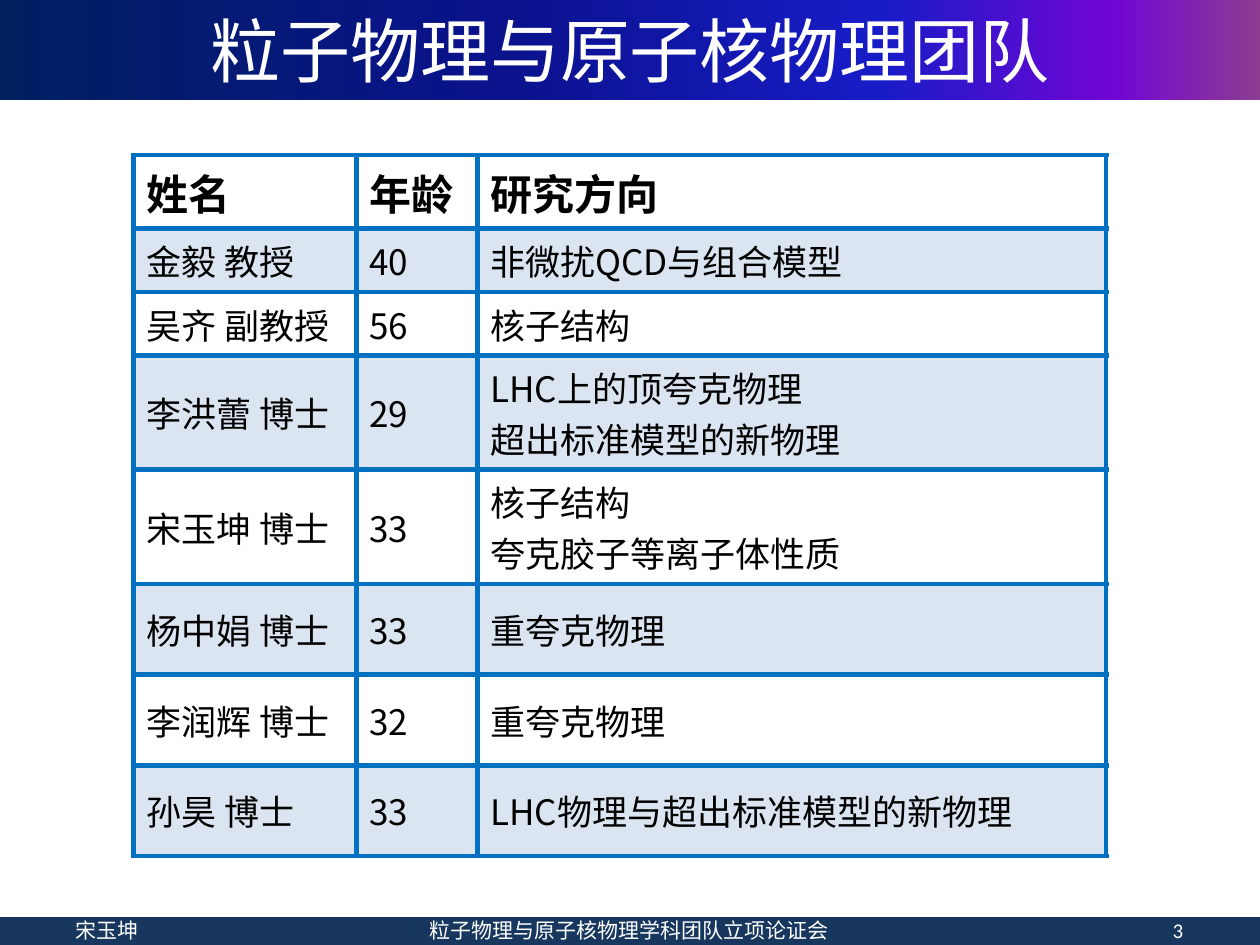
from lxml import etree
from pptx import Presentation
from pptx.dml import color
from pptx.enum import shapes, text
from pptx.oxml import ns
from pptx.util import Pt

WHITE = color.RGBColor(0xFF, 0xFF, 0xFF)
BLACK = color.RGBColor(0x00, 0x00, 0x00)
NAVY = color.RGBColor(0x17, 0x37, 0x5E)
BORDER_BLUE = color.RGBColor(0x00, 0x70, 0xC0)
BAND_BLUE = color.RGBColor(0x4F, 0x81, 0xBD)
HEADER_STOPS = [
    (0, color.RGBColor(0x00, 0x20, 0x60)),
    (40, color.RGBColor(0x0A, 0x12, 0x8C)),
    (70, color.RGBColor(0x18, 0x1C, 0xC7)),
    (88, color.RGBColor(0x70, 0x05, 0xD4)),
    (100, color.RGBColor(0x8C, 0x3D, 0x91)),
]
CJK_FONT = "Noto Sans CJK SC"
LATIN_FONT = "Calibri"

COLUMN_WIDTHS = [127.44, 69.12, 359.28]
ROW_HEIGHTS = [33.84] + [29.52] * 2 + [51.84] * 5
TEAM = [
    ("姓名", "年龄", "研究方向"),
    ("金毅 教授", "40", "非微扰QCD与组合模型"),
    ("吴齐 副教授", "56", "核子结构"),
    ("李洪蕾 博士", "29", "LHC上的顶夸克物理\n超出标准模型的新物理"),
    ("宋玉坤 博士", "33", "核子结构\n夸克胶子等离子体性质"),
    ("杨中娟 博士", "33", "重夸克物理"),
    ("李润辉 博士", "32", "重夸克物理"),
    ("孙昊 博士", "33", "LHC物理与超出标准模型的新物理"),
]


def add_xml(parent, tag, **attributes):
    return etree.SubElement(parent, ns.qn(tag), attributes)


def write_text(frame, words, *, size, ink, font=CJK_FONT, bold=False,
               align=text.PP_ALIGN.LEFT):
    """Fill a text frame, one paragraph for each line of words."""
    frame.word_wrap = True
    for index, line in enumerate(words.split("\n")):
        para = frame.add_paragraph() if index else frame.paragraphs[0]
        para.alignment = align
        span = para.add_run()
        span.text = line
        span.font.size = Pt(size)
        span.font.bold = bold
        span.font.color.rgb = ink
        span.font.name = font
        if font == CJK_FONT:
            add_xml(span.font._element, "a:ea", typeface=font)


class SlideBuilder:
    def __init__(self, deck):
        self.page = deck.slides.add_slide(deck.slide_layouts[5])

    def bar(self, top, height, fill=None, stops=None):
        """Add a full-width bar with a plain fill or gradient stops."""
        box = self.page.shapes.add_shape(
            shapes.MSO_SHAPE.RECTANGLE, Pt(-1.44), Pt(top), Pt(722.88), Pt(height))
        box.shadow.inherit = False
        box.line.fill.background()
        if not stops:
            box.fill.solid()
            box.fill.fore_color.rgb = fill
            return
        box.fill.gradient()
        box.fill.gradient_angle = 0
        stop_list = box._element.spPr.find(".//" + ns.qn("a:gsLst"))
        stop_list.clear()
        for position, shade in stops:
            stop = add_xml(stop_list, "a:gs", pos=str(position * 1000))
            add_xml(stop, "a:srgbClr", val=str(shade))

    def title(self, words):
        box = self.page.shapes.title
        box.left, box.top, box.width, box.height = Pt(36), Pt(0), Pt(648), Pt(56.88)
        frame = box.text_frame
        frame.auto_size = text.MSO_AUTO_SIZE.NONE
        frame.vertical_anchor = text.MSO_ANCHOR.MIDDLE
        write_text(frame, words, size=40, ink=WHITE, align=text.PP_ALIGN.CENTER)
        self.page.shapes._spTree.append(box._element)  # in front of the bar

    def footer(self, words, left, width, align):
        box = self.page.shapes.add_textbox(Pt(left), Pt(516.96), Pt(width), Pt(28.8))
        box.text_frame.vertical_anchor = text.MSO_ANCHOR.MIDDLE
        write_text(box.text_frame, words, size=12, ink=WHITE, font=LATIN_FONT,
                   align=align)

    def table(self, rows, left, top):
        frame = self.page.shapes.add_table(
            len(rows), len(COLUMN_WIDTHS), Pt(left), Pt(top),
            Pt(sum(COLUMN_WIDTHS)), Pt(sum(ROW_HEIGHTS)))
        grid = frame.table
        grid.first_row = grid.horz_banding = False
        for column, width in zip(grid.columns, COLUMN_WIDTHS):
            column.width = Pt(width)
        for row, height in zip(grid.rows, ROW_HEIGHTS):
            row.height = Pt(height)
        for row_index, row in enumerate(rows):
            for column_index, words in enumerate(row):
                self.cell(grid.cell(row_index, column_index), words,
                          header=row_index == 0, banded=row_index % 2 == 1)

    def cell(self, cell, words, header, banded):
        cell.vertical_anchor = text.MSO_ANCHOR.MIDDLE
        properties = cell._tc.get_or_add_tcPr()
        for side in "LRTB":
            line = add_xml(properties, "a:ln" + side, w=str(Pt(3)))
            fill = add_xml(line, "a:solidFill")
            add_xml(fill, "a:srgbClr", val=str(BORDER_BLUE))
        if banded:
            cell.fill.solid()
            cell.fill.fore_color.rgb = BAND_BLUE
            shade = properties.find(ns.qn("a:solidFill") + "/" + ns.qn("a:srgbClr"))
            add_xml(shade, "a:alpha", val="20000")
        else:
            cell.fill.background()
        write_text(cell.text_frame, words, size=24 if header else 20, ink=BLACK,
                   bold=header)


def main():
    deck = Presentation()
    deck.slide_width, deck.slide_height = Pt(720), Pt(540)
    builder = SlideBuilder(deck)
    builder.bar(524.16, 17.28, fill=NAVY)
    builder.bar(0, 56.88, stops=HEADER_STOPS)
    builder.footer("宋玉坤", 36, 84.96, text.PP_ALIGN.LEFT)
    builder.footer("粒子物理与原子核物理学科团队立项论证会", 161.28, 396.72,
                   text.PP_ALIGN.CENTER)
    builder.footer("3", 598.32, 84.96, text.PP_ALIGN.RIGHT)
    builder.title("粒子物理与原子核物理团队")
    builder.table(TEAM, 76.32, 88.56)
    deck.save("out.pptx")


if __name__ == "__main__":
    main()
